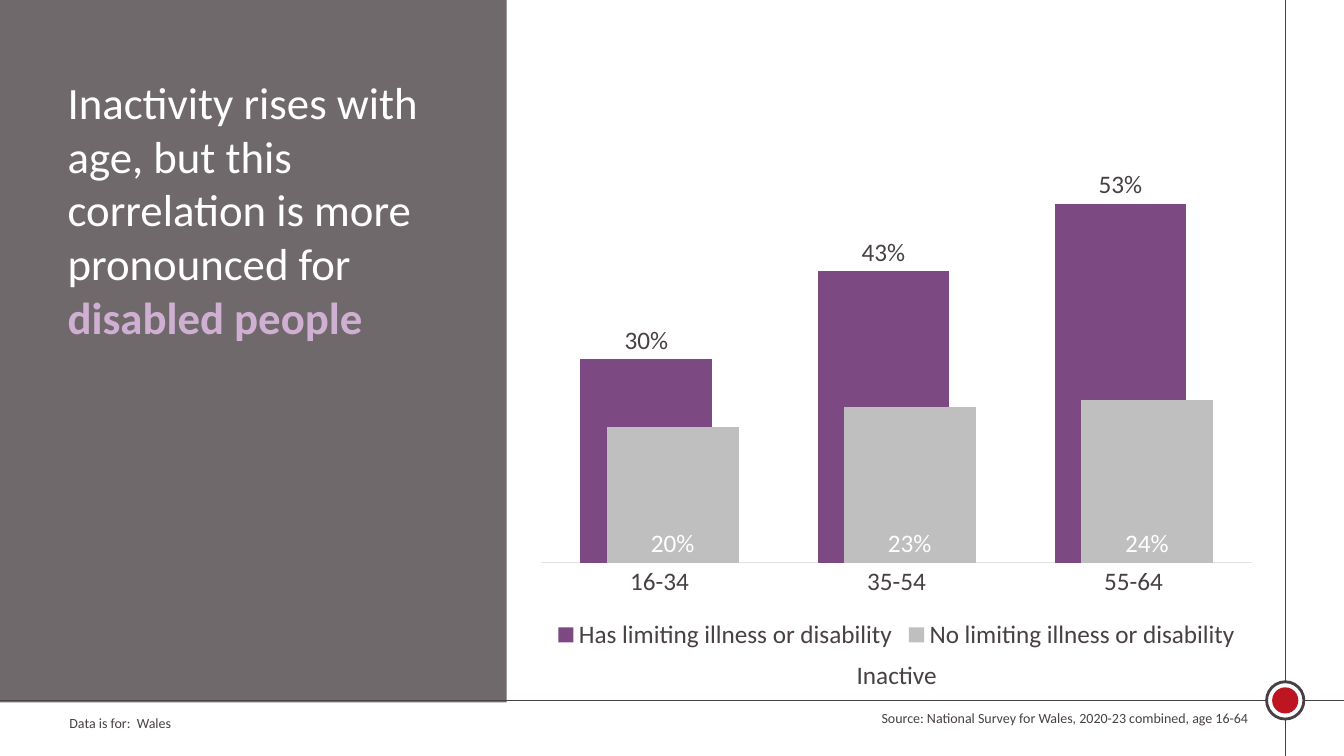
from lxml import etree
from pptx import Presentation
from pptx.chart.data import CategoryChartData
from pptx.dml.color import RGBColor
from pptx.enum.chart import XL_CHART_TYPE, XL_LABEL_POSITION, XL_LEGEND_POSITION, XL_TICK_MARK
from pptx.enum.shapes import MSO_CONNECTOR, MSO_SHAPE
from pptx.enum.text import MSO_ANCHOR, MSO_AUTO_SIZE, PP_ALIGN
from pptx.oxml.ns import qn
from pptx.util import Cm, Pt

COLUMN = XL_CHART_TYPE.COLUMN_CLUSTERED
OUTER = XL_LABEL_POSITION.OUTSIDE_END
BASE = XL_LABEL_POSITION.INSIDE_BASE
BOTTOM = XL_LEGEND_POSITION.BOTTOM
NO_TICK = XL_TICK_MARK.NONE
STRAIGHT = MSO_CONNECTOR.STRAIGHT
RECT, OVAL = MSO_SHAPE.RECTANGLE, MSO_SHAPE.OVAL
TOP = MSO_ANCHOR.TOP
NO_FIT = MSO_AUTO_SIZE.NONE
LEFT, RIGHT = PP_ALIGN.LEFT, PP_ALIGN.RIGHT

INK = RGBColor(0x48, 0x40, 0x43)
WHITE = RGBColor(0xFF, 0xFF, 0xFF)
RED = RGBColor(0xBD, 0x16, 0x22)
LILAC = RGBColor(0xCF, 0xB0, 0xD3)
PURPLE = RGBColor(0x7C, 0x49, 0x82)
GREY = RGBColor(0xBF, 0xBF, 0xBF)
PALE = RGBColor(0xE5, 0xE1, 0xE3)

WIDE, HIGH = 33.87, 19.05
RULE_X, RULE_Y = 32.39, 17.65
AGES = ["16-34", "35-54", "55-64"]
SERIES = [
    ("Has limiting illness or disability", (0.30, 0.43, 0.53), PURPLE, INK, OUTER),
    ("No limiting illness or disability", (0.20, 0.23, 0.24), GREY, WHITE, BASE),
]


def apply(item, style):
    """Set each attribute of item from a dict of format values."""
    for name, value in style.items():
        setattr(item, name, value)


def set_font(font, size, color, bold=False):
    """Give a font its face, size, weight and colour."""
    apply(font, {"name": "Calibri", "size": Pt(size), "bold": bold})
    font.color.rgb = color


def add_text(slide, box, text, size, align=LEFT):
    """Write one line of ink text in the box."""
    frame = slide.shapes.add_textbox(*map(Cm, box)).text_frame
    frame.word_wrap = True
    para = frame.paragraphs[0]
    para.alignment = align
    run = para.add_run()
    run.text = text
    set_font(run.font, size, INK)


def add_solid(shapes, kind, box, color, edge=0):
    """Draw a plain filled shape, with an ink edge if one is given."""
    shape = shapes.add_shape(kind, *map(Cm, box))
    shape.shadow.inherit = False
    shape.fill.solid()
    shape.fill.fore_color.rgb = color
    if edge:
        shape.line.color.rgb = INK
        shape.line.width = Pt(edge)
    else:
        shape.line.fill.background()
    return shape


def add_rule(slide, start, end):
    """Draw a thin ink line between two points."""
    rule = slide.shapes.add_connector(STRAIGHT, *map(Cm, start + end))
    rule.line.color.rgb = INK
    rule.line.width = Pt(1)
    etree.SubElement(rule._element.spPr, qn("a:effectLst"))


def add_frame(slide, box):
    """Draw the crossing rules and the ringed dot where they meet."""
    left, top, wide, high = box
    mid_x, mid_y = left + RULE_X, top + RULE_Y
    add_rule(slide, (mid_x, top), (mid_x, top + high))
    add_rule(slide, (left, mid_y), (left + wide, mid_y))
    group = slide.shapes.add_group_shape()
    for size, color, edge in ((0.94, WHITE, 2), (0.66, RED, 0)):
        spot = (mid_x - size / 2, mid_y - size / 2, size, size)
        add_solid(group.shapes, OVAL, spot, color, edge)


def add_panel(slide, box):
    """Draw the see-through panel and set the title on it."""
    left, top, wide, high = box
    panel = add_solid(slide.shapes, RECT, box, INK)
    tint = panel._element.spPr.find(".//" + qn("a:srgbClr"))
    etree.SubElement(tint, qn("a:alpha")).set("val", "78000")
    title = slide.shapes.title
    apply(title, {"left": Cm(left + 1.48), "top": Cm(top + 1.75),
                  "width": Cm(wide - 3.33), "height": Cm(high - 8.12)})
    frame = title.text_frame
    apply(frame, {"word_wrap": True, "auto_size": NO_FIT, "vertical_anchor": TOP})
    para = frame.paragraphs[0]
    para.alignment = LEFT
    parts = (
        ("Inactivity rises with age, but this correlation is more pronounced for ", WHITE, False),
        ("disabled people", LILAC, True),
    )
    for text, color, bold in parts:
        run = para.add_run()
        run.text = text
        set_font(run.font, 32, color, bold)
    panel._element.addnext(title._element)


def add_graph(slide, box):
    """Chart inactivity by age, with its caption under the legend."""
    left, top, wide, high = box
    data = CategoryChartData(number_format="0%")
    data.categories = AGES
    for name, values, *_ in SERIES:
        data.add_series(name, values)
    chart = slide.shapes.add_chart(COLUMN, *map(Cm, box), data).chart
    apply(chart, {"has_title": False, "has_legend": True})
    set_font(chart.font, 18, INK)
    apply(chart.legend, {"position": BOTTOM, "include_in_layout": False})
    set_font(chart.legend.font, 18, INK)
    apply(chart.value_axis, {"visible": False, "has_major_gridlines": False,
                             "minimum_scale": 0, "maximum_scale": 0.6})
    axis = chart.category_axis
    apply(axis, {"major_tick_mark": NO_TICK, "minor_tick_mark": NO_TICK})
    axis.format.line.color.rgb = PALE
    axis.format.line.width = Pt(0.75)
    set_font(axis.tick_labels.font, 18, INK)
    plot = chart.plots[0]
    apply(plot, {"gap_width": 60, "overlap": 80, "vary_by_categories": False})
    for bars, (_, _, color, ink, place) in zip(plot.series, SERIES):
        bars.format.fill.solid()
        bars.format.fill.fore_color.rgb = color
        labels = bars.data_labels
        apply(labels, {"show_value": True, "number_format": "0%",
                       "number_format_is_linked": False, "position": place})
        set_font(labels.font, 18, ink)
    add_text(slide, (left + 8.08, top + high - 0.02, 3.1, 1.02), "Inactive", 18)


def add_notes(slide, box):
    """Write the coverage and the source in the strip at the foot."""
    left, top, wide, high = box
    add_text(slide, (left, top + 0.13, 11.15, high), "Data is for: \u00a0Wales".replace("\u00a0", " "), 10)
    source = "Source: National Survey for Wales, 2020-23 combined, age 16-64"
    add_text(slide, (left + wide - 10.57, top, 10.57, high), source, 10, RIGHT)


def main():
    """Build the slide and save it."""
    deck = Presentation()
    apply(deck, {"slide_width": Cm(WIDE), "slide_height": Cm(HIGH)})
    slide = deck.slides.add_slide(deck.slide_layouts[5])
    add_frame(slide, (0, 0, WIDE, HIGH))
    add_panel(slide, (-0.03, 0, 12.8, 17.7))
    add_notes(slide, (1.5, 17.75, 30.2, 0.69))
    add_graph(slide, (13.26, 3.68, 18.67, 12.83))
    deck.save("out.pptx")


if __name__ == "__main__":
    main()
